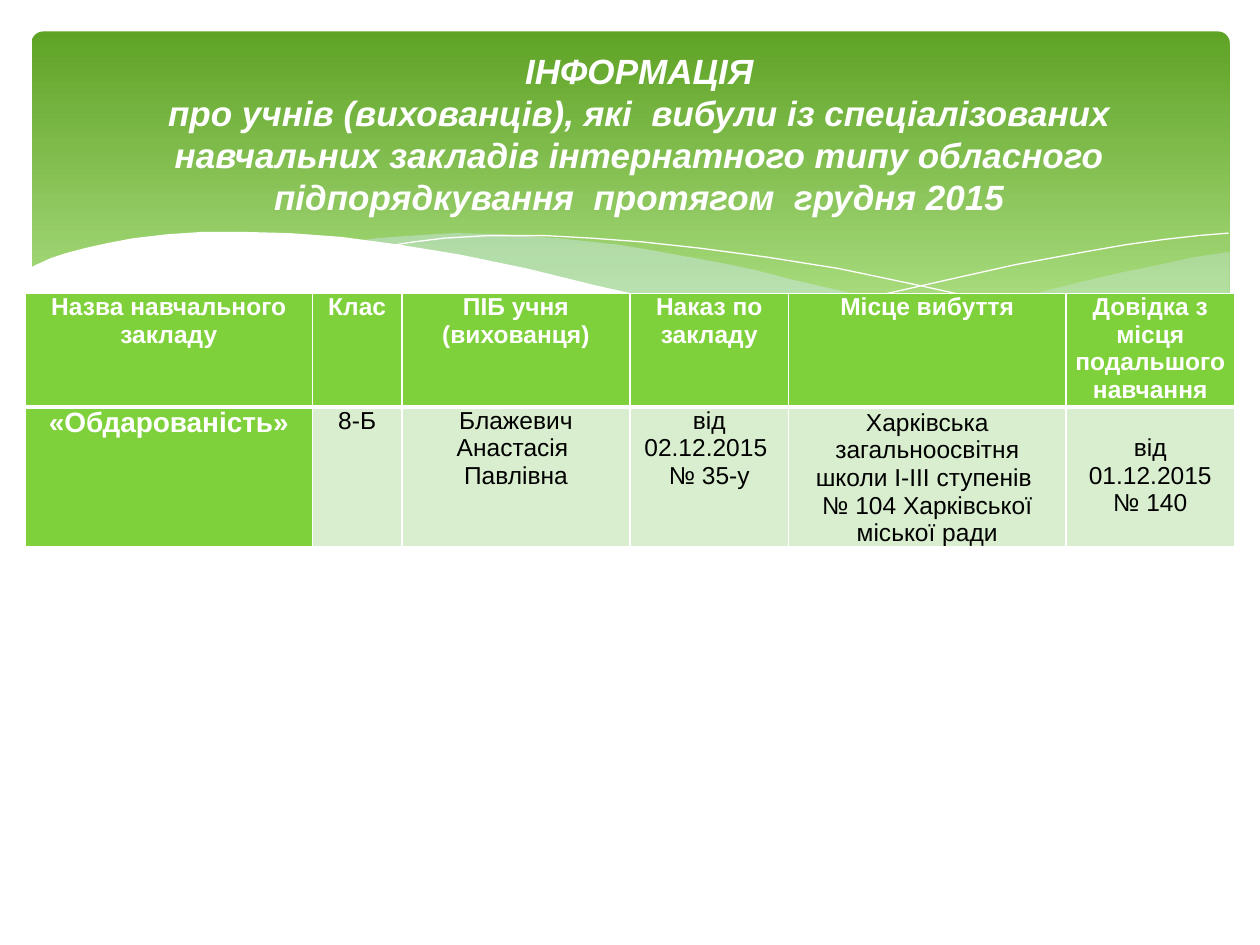
from lxml.etree import SubElement
from pptx import Presentation
from pptx.dml.color import RGBColor
from pptx.enum.shapes import MSO_SHAPE as Shape
from pptx.enum.text import MSO_ANCHOR as Anchor, PP_ALIGN as Align
from pptx.oxml.ns import qn
from pptx.util import Inches, Pt

COLORS = {"white": "FFFFFF", "black": "000000", "green": "7FD13B", "pale": "D8EECE",
          "dark": "5FA326", "light": "B2E389", "mist": "D6ECFF"}
FONT = "Arial"
TITLE = ["ІНФОРМАЦІЯ",
         "про учнів (вихованців), які  вибули із спеціалізованих навчальних закладів "
         "інтернатного типу обласного підпорядкування  протягом  грудня 2015"]
ROWS = [
    [["Назва навчального закладу"], ["Клас"], ["ПІБ учня (вихованця)"],
     ["Наказ по закладу"], ["Місце вибуття"], ["Довідка з місця подальшого навчання"]],
    [["«Обдарованість»"], ["8-Б"], ["Блажевич Анастасія ", "Павлівна"],
     ["від 02.12.2015 ", "№ 35-у"],
     ["Харківська загальноосвітня школи І-ІІІ ступенів ", "№ 104 Харківської міської ради"],
     ["від 01.12.2015 № 140"]],
]
COLUMN_WIDTHS = [2.28, 0.71, 1.81, 1.26, 2.2, 1.34]
ROW_HEIGHTS = [0.9, 1.11]
UNITS_PER_INCH = 100

RIGHT_WAVE = [(975, 200), (948, 204), (921, 210), (891, 216), (861, 223), (805, 237),
              (753, 248), (706, 257), (661, 265), (691, 269), (719, 272), (745, 275),
              (769, 277), (803, 278), (835, 277), (863, 275), (889, 272), (913, 267),
              (935, 262), (949, 257), (963, 252), (976, 247), (976, 200)]
MIDDLE_WAVE = [(893, 273), (866, 269), (807, 260), (741, 247), (668, 231), (629, 222),
               (598, 214), (569, 208), (541, 203), (514, 198), (489, 194), (442, 189),
               (399, 186), (361, 185), (328, 187), (299, 189), (286, 191), (323, 196),
               (362, 203), (404, 211), (449, 222), (530, 240), (601, 255), (650, 264),
               (695, 270), (736, 275), (773, 277), (807, 278), (838, 278), (867, 276)]
FALLING_LINE = [(309, 195), (328, 192), (353, 189), (387, 187), (433, 187), (469, 189),
                (510, 192), (556, 197), (608, 204), (665, 213), (727, 226), (795, 241),
                (869, 261), (907, 272)]
RISING_LINE = [(613, 257), (653, 246), (695, 235), (748, 223), (806, 210), (866, 199),
               (895, 194), (924, 190), (951, 187), (975, 185)]
FRONT_WAVE = [(977, 246), (959, 253), (940, 259), (920, 265), (899, 269), (875, 273),
              (850, 275), (809, 277), (778, 276), (744, 274), (708, 270), (668, 265),
              (626, 258), (579, 250), (529, 239), (475, 227), (418, 213), (365, 202),
              (316, 194), (271, 188), (230, 185), (193, 184), (161, 184), (132, 186),
              (106, 189), (85, 193), (67, 197), (52, 201), (40, 205), (29, 210),
              (23, 213), (23, 329), (977, 329)]
WAVES = [(RIGHT_WAVE, "mist", 29), (MIDDLE_WAVE, "mist", 40),
         (FALLING_LINE, None, 100), (RISING_LINE, None, 100), (FRONT_WAVE, "white", 100)]


def rgb(name):
    return RGBColor.from_string(COLORS[name])


def add_span(para, text, size, color, bold=True, italic=False):
    para.alignment = Align.CENTER
    span = para.add_run()
    span.text = text
    span.font.name = FONT
    span.font.size = Pt(size)
    span.font.bold = bold
    span.font.italic = italic
    span.font.color.rgb = rgb(color)


def add_banner(page):
    banner = page.shapes.add_shape(Shape.ROUNDED_RECTANGLE, Inches(0.25), Inches(0.25),
                                   Inches(9.51), Inches(2.7))
    banner.adjustments[0] = 0.034
    banner.shadow.inherit = False
    banner.line.fill.background()
    banner.fill.gradient()
    banner.fill.gradient_angle = 270
    for stop, color, position in zip(banner.fill.gradient_stops, ("dark", "light"), (0, 0.9)):
        stop.color.rgb = rgb(color)
        stop.position = position


def add_wave(page, points, color, opacity):
    builder = page.shapes.build_freeform(*points[0], scale=Inches(1) / UNITS_PER_INCH)
    builder.add_line_segments(points[1:], close=color is not None)
    wave = builder.convert_to_shape()
    wave.shadow.inherit = False
    if color is None:
        wave.fill.background()
        wave.line.color.rgb = rgb("white")
        wave.line.width = Pt(0)
        return
    wave.line.fill.background()
    wave.fill.solid()
    wave.fill.fore_color.rgb = rgb(color)
    if opacity < 100:
        tint = wave.element.find(".//" + qn("a:srgbClr"))
        SubElement(tint, qn("a:alpha"), val=str(opacity * 1000))


def place_title(page):
    title = page.shapes.title
    title.left, title.top = Inches(0.51), Inches(0.36)
    title.width, title.height = Inches(9.13), Inches(1.73)
    frame = title.text_frame
    frame.word_wrap = True
    frame.vertical_anchor = Anchor.MIDDLE
    frame.margin_bottom = Inches(0.38)
    para = frame.paragraphs[0]
    for index, line in enumerate(TITLE):
        if index:
            para.add_line_break()
        add_span(para, line, 20, "white", italic=True)
    title.element.getparent().append(title.element)


def set_borders(cell, widths):
    properties = cell._tc.get_or_add_tcPr()
    for side, width in widths.items():
        line = SubElement(properties, qn("a:ln" + side), w=str(Pt(width)))
        paint = SubElement(line, qn("a:solidFill"))
        SubElement(paint, qn("a:srgbClr"), val=COLORS["white"])


def fill_cell(cell, paras, row, column):
    strong = row == 0 or column == 0
    set_borders(cell, {"L": 1, "R": 1, "T": 3 if row else 1, "B": 1 if row else 3})
    cell.fill.solid()
    cell.fill.fore_color.rgb = rgb("green" if strong else "pale")
    cell.margin_left = cell.margin_right = Inches(0.06 if strong else 0.07)
    cell.margin_top = cell.margin_bottom = 0
    frame = cell.text_frame
    for index, text in enumerate(paras):
        para = frame.add_paragraph() if index else frame.paragraphs[0]
        add_span(para, text, 16 if row and strong else 14,
                 "white" if strong else "black", bold=strong)


def add_pupil_table(page):
    table = page.shapes.add_table(len(ROWS), len(COLUMN_WIDTHS), Inches(0.2), Inches(2.33),
                                  Inches(sum(COLUMN_WIDTHS)), Inches(sum(ROW_HEIGHTS))).table
    for column, width in zip(table.columns, COLUMN_WIDTHS):
        column.width = Inches(width)
    for row, height in zip(table.rows, ROW_HEIGHTS):
        row.height = Inches(height)
    for row, cells in enumerate(ROWS):
        for column, paras in enumerate(cells):
            fill_cell(table.cell(row, column), paras, row, column)
    table.cell(1, 4).vertical_anchor = Anchor.BOTTOM
    table.cell(1, 5).margin_top = Inches(0.22)


def main():
    deck = Presentation()
    deck.slide_width, deck.slide_height = Inches(10), Inches(7.5)
    page = deck.slides.add_slide(deck.slide_layouts[5])
    add_banner(page)
    for points, color, opacity in WAVES:
        add_wave(page, points, color, opacity)
    place_title(page)
    add_pupil_table(page)
    deck.save("out.pptx")


if __name__ == "__main__":
    main()
